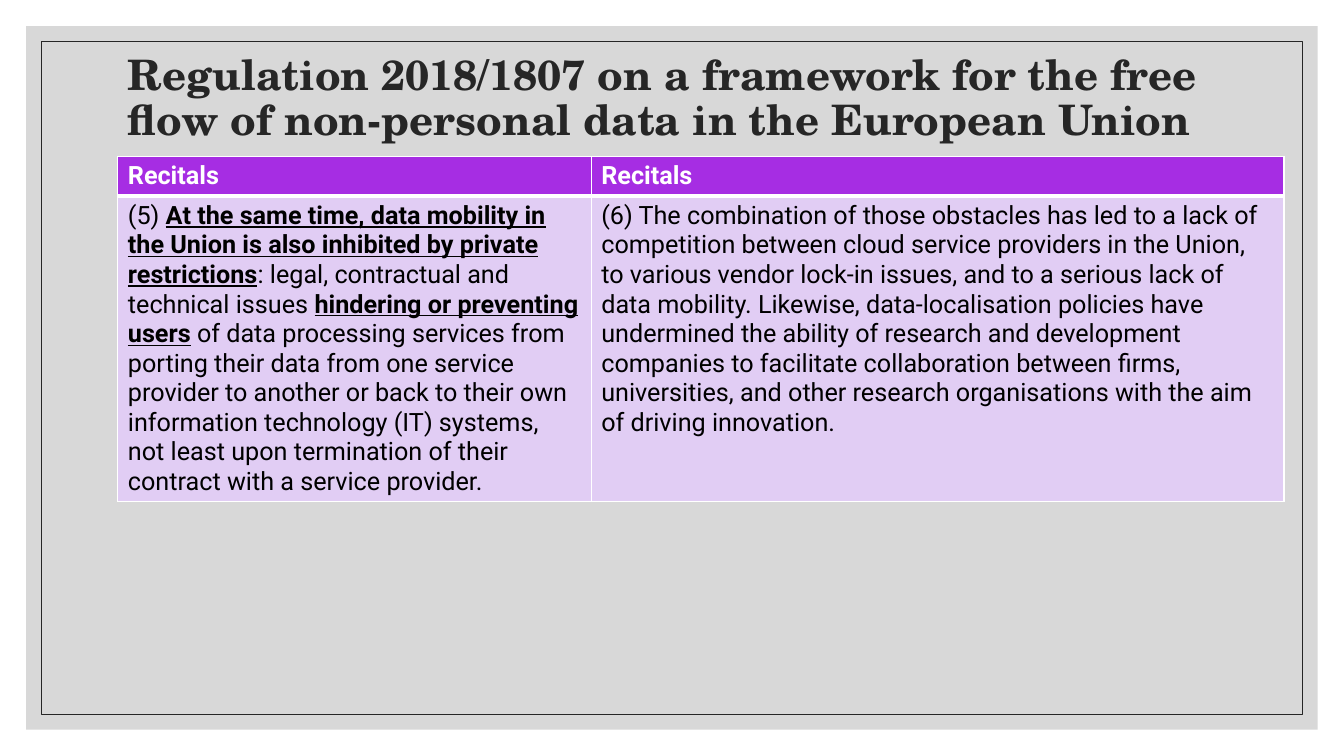
from pptx import Presentation
from pptx.dml.color import RGBColor
from pptx.enum.shapes import MSO_SHAPE
from pptx.enum.text import MSO_ANCHOR, MSO_AUTO_SIZE, PP_ALIGN
from pptx.oxml import parse_xml
from pptx.oxml.ns import nsdecls
from pptx.util import Cm, Pt

WHITE = RGBColor(0xFF, 0xFF, 0xFF)
BLACK = RGBColor(0x00, 0x00, 0x00)
INK = RGBColor(0x26, 0x26, 0x26)
GREY = RGBColor(0xBF, 0xBF, 0xBF)
PURPLE = RGBColor(0xA6, 0x2D, 0xE3)
LILAC = RGBColor(0xE1, 0xCD, 0xF4)

TITLE = ("Regulation 2018/1807 on a framework for the free flow of "
         "non-personal data in the European Union")
HEADINGS = ["Recitals", "Recitals"]
RECITALS = [
    [
        ("(5) ", False),
        ("At the same time, data mobility in the Union is also inhibited by "
         "private restrictions", True),
        (": legal, contractual and technical issues ", False),
        ("hindering or preventing users", True),
        (" of data processing services from porting their data from one service "
         "provider to another or back to their own information technology (IT) "
         "systems, not least upon termination of their contract with a service "
         "provider.", False),
    ],
    [
        ("(6) The combination of those obstacles has led to a lack of competition "
         "between cloud service providers in the Union, to various vendor lock-in "
         "issues, and to a serious lack of data mobility. Likewise, "
         "data-localisation policies have undermined the ability of research and "
         "development companies to facilitate collaboration between firms, "
         "universities, and other research organisations with the aim of driving "
         "innovation.", False),
    ],
]
COLUMN_WIDTHS = [Cm(11.93), Cm(17.46)]
ROW_HEIGHTS = [Cm(0.94), Cm(7.7)]


def add_run(paragraph, text, *, font="Roboto", size=18, color=BLACK,
            bold=False, underline=False):
    run = paragraph.add_run()
    run.text = text
    run.font.name = font
    run.font.size = Pt(size)
    run.font.color.rgb = color
    run.font.bold = bold
    run.font.underline = underline


def add_panel(slide, inset, *, fill=None, opacity=100, line=None):
    width, height = Cm(33.87) - 2 * inset, Cm(19.05) - 2 * inset
    panel = slide.shapes.add_shape(MSO_SHAPE.RECTANGLE, inset, inset, width, height)
    panel.shadow.inherit = False
    if fill is None:
        panel.fill.background()
    else:
        panel.fill.solid()
        panel.fill.fore_color.rgb = fill
        color = panel.fill._xPr.solidFill[0]
        color.append(parse_xml(f'<a:alpha {nsdecls("a")} val="{opacity * 1000}"/>'))
    if line is None:
        panel.line.fill.background()
    else:
        panel.line.color.rgb = line
        panel.line.width = Pt(0.5)


def set_title(slide, text):
    title = slide.shapes.title
    title.left, title.top, title.width, title.height = (
        Cm(2.97), Cm(1.42), Cm(27.94), Cm(2.16))
    frame = title.text_frame
    frame.word_wrap = True
    frame.auto_size = MSO_AUTO_SIZE.NONE
    frame.vertical_anchor = MSO_ANCHOR.MIDDLE
    paragraph = frame.paragraphs[0]
    paragraph.alignment = PP_ALIGN.LEFT
    paragraph.line_spacing = 0.9
    add_run(paragraph, text, font="TeX Gyre Schola", size=30, color=INK, bold=True)
    title.element.getparent().append(title.element)


def set_borders(cell, **widths):
    properties = cell._tc.get_or_add_tcPr()
    for index, side in enumerate(("lnL", "lnR", "lnT", "lnB")):
        width = Pt(widths.get(side, 1))
        properties.insert(index, parse_xml(
            f'<a:{side} {nsdecls("a")} w="{width}"><a:solidFill>'
            f'<a:srgbClr val="{WHITE}"/></a:solidFill></a:{side}>'))


def fill_cell(cell, color):
    cell.fill.solid()
    cell.fill.fore_color.rgb = color


def add_recital_table(slide):
    table = slide.shapes.add_table(
        2, len(HEADINGS), Cm(2.97), Cm(3.94),
        sum(COLUMN_WIDTHS), sum(ROW_HEIGHTS)).table
    for row, height in zip(table.rows, ROW_HEIGHTS):
        row.height = height
    for index, (heading, recital) in enumerate(zip(HEADINGS, RECITALS)):
        table.columns[index].width = COLUMN_WIDTHS[index]
        header, body = table.cell(0, index), table.cell(1, index)
        fill_cell(header, PURPLE)
        fill_cell(body, LILAC)
        set_borders(header, lnB=3)
        set_borders(body, lnT=3)
        add_run(header.text_frame.paragraphs[0], heading, color=WHITE, bold=True)
        for text, stressed in recital:
            add_run(body.text_frame.paragraphs[0], text,
                    bold=stressed, underline=stressed)


def main():
    presentation = Presentation()
    presentation.slide_width = Cm(33.87)
    presentation.slide_height = Cm(19.05)
    slide = presentation.slides.add_slide(presentation.slide_layouts[5])
    add_panel(slide, Cm(0.66), fill=GREY, opacity=60)
    add_panel(slide, Cm(1.04), line=INK)
    set_title(slide, TITLE)
    add_recital_table(slide)
    presentation.save("out.pptx")


if __name__ == "__main__":
    main()
